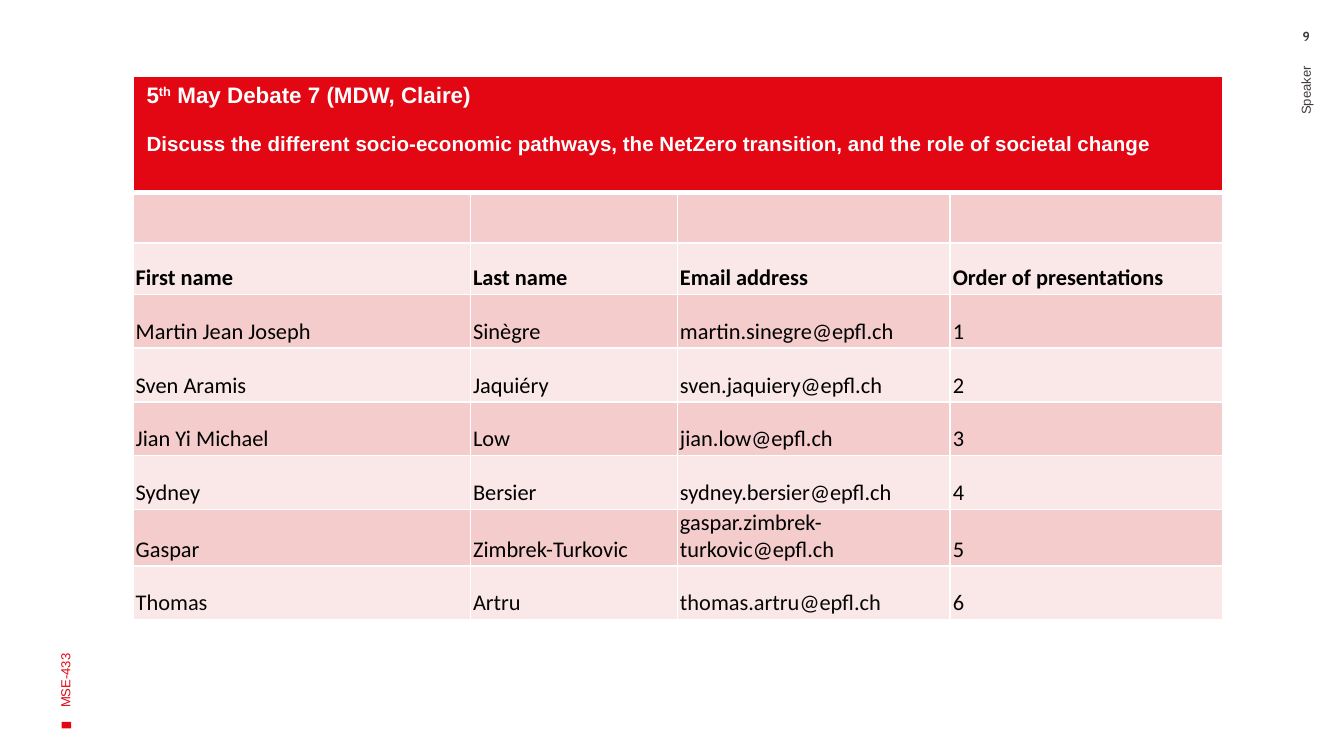
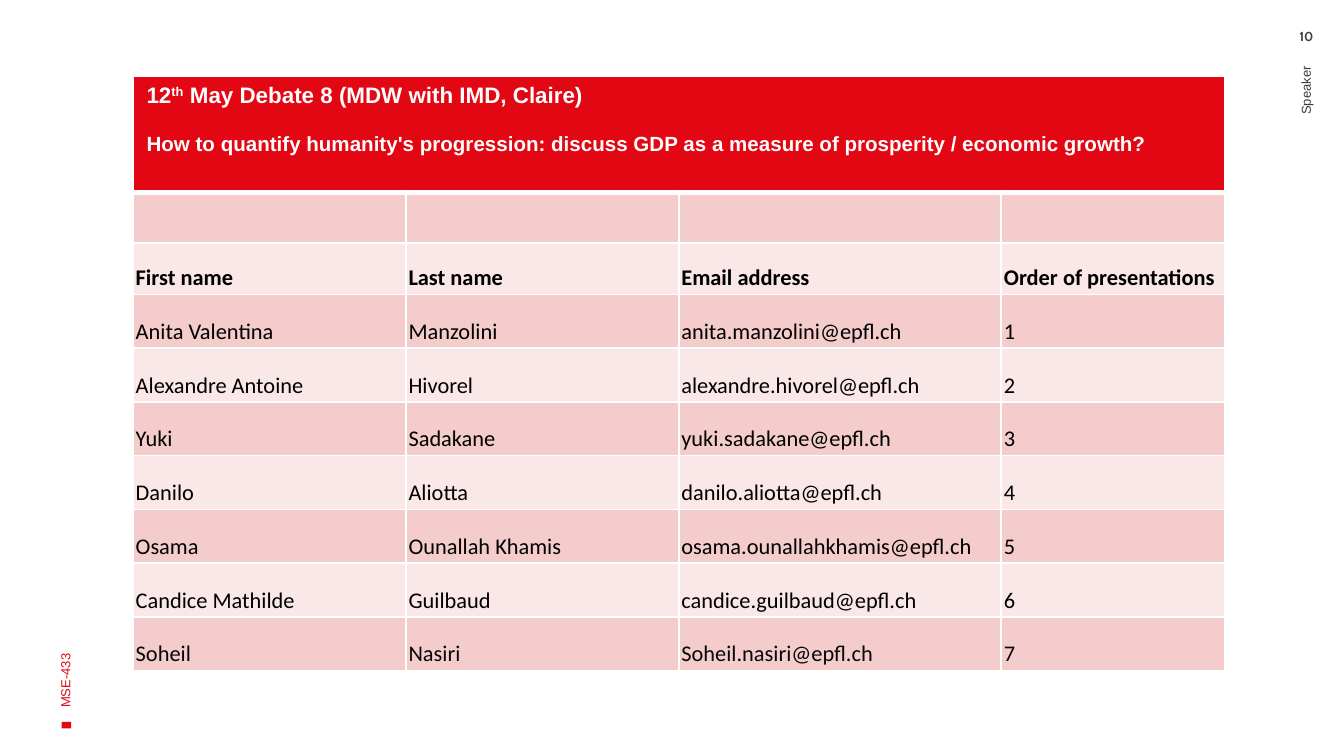
from dataclasses import dataclass

from lxml import etree
from pptx import Presentation
from pptx.dml.color import RGBColor
from pptx.enum import shapes, text
from pptx.oxml import ns
from pptx.util import Inches, Pt


@dataclass(frozen=True)
class Theme:
    red: str = "E30613"
    band_dark: str = "F4CCCC"
    band_light: str = "FAE7E7"
    white: str = "FFFFFF"
    ink: str = "000000"
    last_row_ink: str = "070707"
    grey: str = "413C3A"
    sans: str = "Arial"
    table_font: str = "Calibri"
    number_font: str = "Cabin"
    small: int = 7
    body: int = 12
    topic: int = 11
    topic_gap: int = 13
    thin_line: int = 1
    thick_line: int = 3


COLUMN_TITLES = ("First name", "Last name", "Email address", "Order of presentations")
HEADER_HEIGHT, TITLE_HEIGHT, ROW_HEIGHT = 0.86, 0.38, 0.4

DEBATES = [
    {
        "number": 9,
        "day": "5",
        "heading": " May Debate 7 (MDW, Claire)",
        "topic": "Discuss the different socio-economic pathways, the NetZero transition, "
                 "and the role of societal change",
        "widths": (2.51, 1.54, 2.03, 2.03),
        "speakers": [
            ("Martin Jean Joseph", "Sinègre", "martin.sinegre@epfl.ch"),
            ("Sven Aramis", "Jaquiéry", "sven.jaquiery@epfl.ch"),
            ("Jian Yi Michael", "Low", "jian.low@epfl.ch"),
            ("Sydney", "Bersier", "sydney.bersier@epfl.ch"),
            ("Gaspar", "Zimbrek-Turkovic", "gaspar.zimbrek-turkovic@epfl.ch"),
            ("Thomas", "Artru", "thomas.artru@epfl.ch"),
        ],
    },
    {
        "number": 10,
        "day": "12",
        "heading": " May Debate 8 (MDW with IMD, Claire)",
        "topic": "How to quantify humanity's progression: discuss GDP as a measure of "
                 "prosperity / economic growth?",
        "widths": (2.03, 2.03, 2.4, 1.66),
        "speakers": [
            ("Anita Valentina", "Manzolini", "anita.manzolini@epfl.ch"),
            ("Alexandre Antoine", "Hivorel", "alexandre.hivorel@epfl.ch"),
            ("Yuki", "Sadakane", "yuki.sadakane@epfl.ch"),
            ("Danilo", "Aliotta", "danilo.aliotta@epfl.ch"),
            ("Osama", "Ounallah Khamis", "osama.ounallahkhamis@epfl.ch"),
            ("Candice Mathilde", "Guilbaud", "candice.guilbaud@epfl.ch"),
            ("Soheil", "Nasiri", "Soheil.nasiri@epfl.ch"),
        ],
    },
]


class DebateDeck:
    def __init__(self, theme):
        self.theme = theme
        self.slide = None
        self.presentation = Presentation()
        self.presentation.slide_width = Inches(10)
        self.presentation.slide_height = Inches(10) * 9 // 16

    def new_slide(self, number):
        """Add a blank slide with the course, speaker and page labels."""
        theme = self.theme
        self.slide = self.presentation.slides.add_slide(self.presentation.slide_layouts[6])
        self.marker()
        self.side_label("MSE-433", (-1.34, 3.04, 3.65, 1), theme.red, text.PP_ALIGN.LEFT)
        self.side_label("Speaker", (7.78, 2.05, 3.87, 0.56), theme.grey, text.PP_ALIGN.RIGHT)
        self.page_number(number)

    def style_run(self, run, size, color, font, bold=False):
        run.font.size = Pt(size)
        run.font.name = font
        run.font.bold = bold
        run.font.color.rgb = RGBColor.from_string(color)

    def marker(self):
        square = self.slide.shapes.add_shape(
            shapes.MSO_SHAPE.RECTANGLE, *map(Inches, (0.47, 5.36, 0.05, 0.07)))
        square.rotation = 270
        square.shadow.inherit = False
        square.fill.solid()
        square.fill.fore_color.rgb = RGBColor.from_string(self.theme.red)
        square.line.fill.background()

    def text_box(self, label, box, alignment):
        shape = self.slide.shapes.add_textbox(*map(Inches, box))
        shape.text_frame.word_wrap = True
        shape.text_frame.text = label
        paragraph = shape.text_frame.paragraphs[0]
        paragraph.alignment = alignment
        return shape, paragraph.runs[0]

    def side_label(self, label, box, color, alignment):
        shape, run = self.text_box(label, box, alignment)
        shape.rotation = 270
        shape.text_frame.vertical_anchor = text.MSO_ANCHOR.MIDDLE
        self.style_run(run, self.theme.small, color, self.theme.sans)

    def page_number(self, number):
        shape, run = self.text_box(str(number), (9.44, 0.21, 0.56, 0.18), text.PP_ALIGN.CENTER)
        shape.text_frame.margin_top = shape.text_frame.margin_bottom = 0
        self.style_run(run, self.theme.small, self.theme.grey, self.theme.number_font, bold=True)

    def style_cell(self, cell, fill, top, bottom):
        """Draw the four white borders, then fill the cell."""
        theme = self.theme
        properties = cell._tc.get_or_add_tcPr()
        sides = {"L": theme.thin_line, "R": theme.thin_line, "T": top, "B": bottom}
        for side, width in sides.items():
            line = etree.SubElement(properties, ns.qn(f"a:ln{side}"), w=str(Pt(width)))
            solid = etree.SubElement(line, ns.qn("a:solidFill"))
            etree.SubElement(solid, ns.qn("a:srgbClr"), val=theme.white)
        cell.fill.solid()
        cell.fill.fore_color.rgb = RGBColor.from_string(fill)

    def body_cell(self, cell, value, color, bold):
        cell.vertical_anchor = text.MSO_ANCHOR.BOTTOM
        cell.margin_left = cell.margin_right = cell.margin_bottom = Inches(0.02)
        cell.margin_top = 0
        cell.text_frame.text = value
        for run in cell.text_frame.paragraphs[0].runs:
            self.style_run(run, self.theme.body, color, self.theme.table_font, bold)

    def header_text(self, cell, day, heading, topic):
        theme = self.theme
        date_line = cell.text_frame.paragraphs[0]
        for part in (day, "th", heading):
            run = date_line.add_run()
            run.text = part
            self.style_run(run, theme.body, theme.white, theme.sans, bold=True)
        date_line.runs[1]._r.get_or_add_rPr().set("baseline", "30000")
        topic_line = cell.text_frame.add_paragraph()
        topic_line.text = topic
        topic_line.space_before = Pt(theme.topic_gap)
        self.style_run(topic_line.runs[0], theme.topic, theme.white, theme.sans, bold=True)

    def debate_table(self, debate):
        theme = self.theme
        speakers = [(*names, str(order))
                    for order, names in enumerate(debate["speakers"], start=1)]
        rows = [("",) * len(COLUMN_TITLES), COLUMN_TITLES, *speakers]
        heights = [HEADER_HEIGHT, TITLE_HEIGHT, TITLE_HEIGHT] + [ROW_HEIGHT] * len(speakers)
        table = self.slide.shapes.add_table(
            len(heights), len(COLUMN_TITLES), Inches(0.99), Inches(0.57),
            Inches(sum(debate["widths"])), Inches(sum(heights))).table
        for column, width in zip(table.columns, debate["widths"]):
            column.width = Inches(width)
        for row, height in zip(table.rows, heights):
            row.height = Inches(height)

        for cell in table.rows[0].cells:
            self.style_cell(cell, theme.red, theme.thin_line, theme.thick_line)
        table.cell(0, 0).merge(table.cell(0, len(COLUMN_TITLES) - 1))
        self.header_text(table.cell(0, 0), debate["day"], debate["heading"], debate["topic"])

        for index, values in enumerate(rows, start=1):
            fill = theme.band_dark if index % 2 else theme.band_light
            top = theme.thick_line if index == 1 else theme.thin_line
            color = theme.last_row_ink if index == len(rows) else theme.ink
            for cell, value in zip(table.rows[index].cells, values):
                self.style_cell(cell, fill, top, theme.thin_line)
                self.body_cell(cell, value, color, bold=values is COLUMN_TITLES)


def main():
    deck = DebateDeck(Theme())
    for debate in DEBATES:
        deck.new_slide(debate["number"])
        deck.debate_table(debate)
    deck.presentation.save("out.pptx")


if __name__ == "__main__":
    main()
